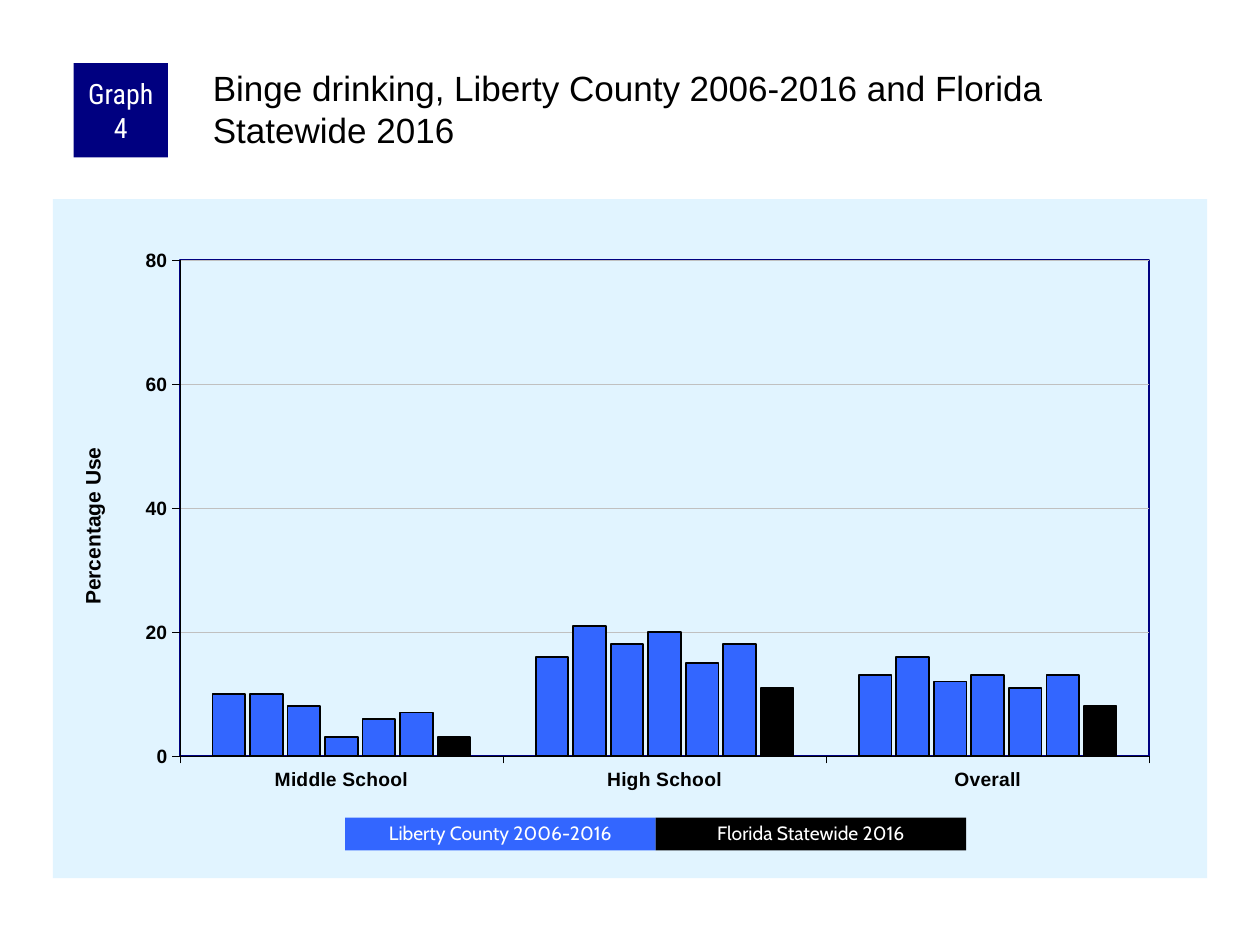
from lxml import etree
from pptx import Presentation
from pptx.chart.data import CategoryChartData
from pptx.dml.color import RGBColor
from pptx.enum.chart import XL_CHART_TYPE, XL_TICK_MARK
from pptx.enum.shapes import MSO_SHAPE
from pptx.enum.text import MSO_ANCHOR, PP_ALIGN
from pptx.oxml import parse_xml
from pptx.oxml.ns import nsdecls, qn
from pptx.util import Pt

COLUMN = XL_CHART_TYPE.COLUMN_CLUSTERED
OUT = XL_TICK_MARK.OUTSIDE
RECT = MSO_SHAPE.RECTANGLE
MIDDLE, TOP = MSO_ANCHOR.MIDDLE, MSO_ANCHOR.TOP
CENTER, LEFT = PP_ALIGN.CENTER, PP_ALIGN.LEFT
BLACK, WHITE, NAVY, BLUE = "000000", "FFFFFF", "000080", "3366FF"


def tint(code):
    return RGBColor.from_string(code)


def label(text, box, size, font, color=WHITE, fill=None, align=CENTER,
          anchor=MIDDLE, inset=(7.2, 3.6, 7.2, 3.6), spacing=None):
    area = [Pt(n) for n in box]
    if fill:
        shape = slide.shapes.add_shape(RECT, *area)
        shape.shadow.inherit = False
        shape.fill.solid()
        shape.fill.fore_color.rgb = tint(fill)
        shape.line.fill.background()
    else:
        shape = slide.shapes.add_textbox(*area)
    frame = shape.text_frame
    frame.word_wrap = True
    frame.vertical_anchor = anchor
    (frame.margin_left, frame.margin_top,
     frame.margin_right, frame.margin_bottom) = [Pt(n) for n in inset]
    para = frame.paragraphs[0]
    para.alignment = align
    para.line_spacing = spacing
    run = para.add_run()
    run.text = text
    run.font.size = Pt(size)
    run.font.name = font
    run.font.color.rgb = tint(color)


deck = Presentation()
deck.slide_width, deck.slide_height = Pt(720), Pt(540)
slide = deck.slides.add_slide(deck.slide_layouts[6])

data = CategoryChartData()
data.categories = ["Middle School", "High School", "Overall"]
rows = [(10, 16, 13), (10, 21, 16), (8, 18, 12), (3, 20, 13),
        (6, 15, 11), (7, 18, 13), (3, 11, 8)]
for count, row in enumerate(rows, 1):
    data.add_series(f"Series {count}", row)
chart = slide.shapes.add_chart(
    COLUMN, Pt(30.24), Pt(113.76), Pt(659.52), Pt(388.08), data).chart
chart.has_title = False
chart.has_legend = False
chart.font.size = Pt(8)
chart.font.name = "Arial"
chart.font.color.rgb = tint(BLACK)

plot = chart.plots[0]
plot.gap_width, plot.overlap = 200, -15
plot.vary_by_categories = False
for index, series in enumerate(plot.series):
    style = series.format
    style.fill.solid()
    style.fill.fore_color.rgb = tint(BLUE if index < len(rows) - 1 else BLACK)
    style.line.color.rgb = tint(BLACK)
    style.line.width = Pt(1)

scale = chart.value_axis
for axis in (chart.category_axis, scale):
    axis.major_tick_mark = OUT
    axis.format.line.color.rgb = tint(BLACK)
    axis.format.line.width = Pt(0.25)
    font = axis.tick_labels.font
    font.size, font.bold, font.name = Pt(11), True, "Arial"
    font.color.rgb = tint(BLACK)
scale.minimum_scale, scale.maximum_scale, scale.major_unit = 0, 80, 20
grid = scale.major_gridlines.format.line
grid.color.rgb = tint("C0C0C0")
grid.width = Pt(0.25)

frame = scale.axis_title.text_frame
frame.text = "Percentage Use"
font = frame.paragraphs[0].runs[0].font
font.size, font.bold, font.name = Pt(12), True, "Arial"
font.color.rgb = tint(BLACK)

root = chart.element
field = root.find(".//" + qn("c:plotArea"))
title = root.find(".//" + qn("c:valAx")).find(qn("c:title"))
turn = title.find(".//" + qn("a:bodyPr"))
turn.set("rot", "-5400000")
turn.set("vert", "horz")

places = [
    (field, 0, dict(layoutTarget="inner", xMode="edge", yMode="edge",
                    x=0.11, y=0.09, w=0.84, h=0.73)),
    (title, 1, dict(xMode="edge", yMode="edge", x=0.02, y=0.36)),
]
for parent, spot, values in places:
    old = parent.find(qn("c:layout"))
    if old is not None:
        parent.remove(old)
    layout = parse_xml(f"<c:layout {nsdecls('c')}><c:manualLayout/></c:layout>")
    for key, value in values.items():
        etree.SubElement(layout[0], qn("c:" + key)).set("val", str(value))
    parent.insert(spot, layout)

field.append(parse_xml(
    f'<c:spPr {nsdecls("c", "a")}><a:noFill/><a:ln w="12700"><a:solidFill>'
    f'<a:srgbClr val="{NAVY}"/></a:solidFill></a:ln></c:spPr>'))
root.find(qn("c:chart")).addnext(parse_xml(
    f'<c:spPr {nsdecls("c", "a")}><a:solidFill><a:srgbClr val="E1F4FF"/>'
    '</a:solidFill><a:ln><a:noFill/></a:ln></c:spPr>'))

label("Graph 4", (42, 36, 54, 54), 16, "Roboto Condensed", fill=NAVY,
      inset=(3.6, 0, 3.6, 0))
label("Binge drinking, Liberty County 2006-2016 and Florida Statewide 2016",
      (119.5, 36, 570, 60), 20, "Arial", color=BLACK, align=LEFT, anchor=TOP,
      inset=(2.16, 2.16, 0, 0))
keys = [("Liberty County 2006-2016", BLUE), ("Florida Statewide 2016", BLACK)]
for index, (text, fill) in enumerate(keys):
    label(text, (197.3 + 177.4 * index, 467.3, 177.4, 18.7), 11, "Cabin",
          fill=fill, spacing=0.9)

deck.save("out.pptx")
